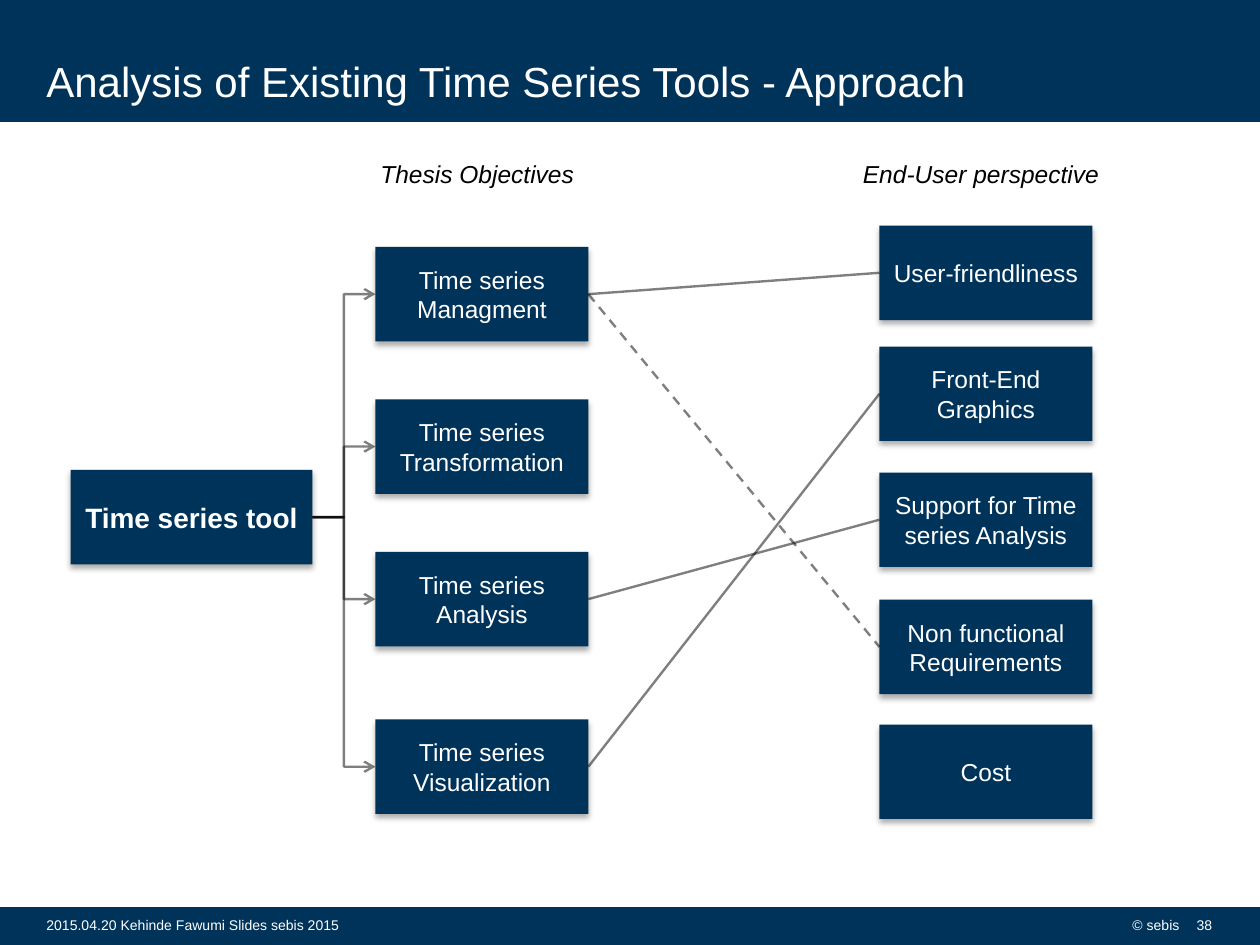
from dataclasses import dataclass
from typing import Any

from lxml import etree
from pptx import Presentation
from pptx import util as u
from pptx.dml.color import RGBColor
from pptx.enum import dml, shapes, text
from pptx.oxml import ns


@dataclass(frozen=True)
class Theme:
    navy: RGBColor = RGBColor(0x00, 0x33, 0x59)
    white: RGBColor = RGBColor(0xFF, 0xFF, 0xFF)
    black: RGBColor = RGBColor(0x00, 0x00, 0x00)
    font: str = "Arial"
    title: float = 24
    root: float = 16
    body: float = 14
    footer: float = 8
    line: float = 1.35


@dataclass(frozen=True)
class Node:
    label: str
    top: float


@dataclass(frozen=True)
class Link:
    objective: int
    perspective: int
    dashed: bool = False


THEME = Theme()
NODE_HEIGHT = 0.75
COLUMN_WIDTH = 1.69
OBJECTIVES_LEFT = 2.98
PERSPECTIVES_LEFT = 6.98
LEFT_SITE, RIGHT_SITE = 1, 3

ROOT = Node("Time series tool", 3.73)
OBJECTIVES = [
    Node("Time series Managment", 1.96),
    Node("Time series Transformation", 3.17),
    Node("Time series Analysis", 4.38),
    Node("Time series Visualization", 5.71),
]
PERSPECTIVES = [
    Node("User-friendliness", 1.79),
    Node("Front-End Graphics", 2.75),
    Node("Support for Time series Analysis", 3.75),
    Node("Non functional Requirements", 4.76),
    Node("Cost", 5.75),
]
LINKS = [Link(3, 1), Link(2, 2), Link(0, 0), Link(0, 3, dashed=True)]


def add_child(parent: Any, tag: str, **attributes: str) -> Any:
    return etree.SubElement(parent, ns.qn(tag), **attributes)


def write(box: Any, words: str, *, size: float, color: RGBColor = THEME.white,
          bold: bool = False, italic: bool = False, wrap: bool = True,
          align: Any = text.PP_ALIGN.LEFT, anchor: Any = text.MSO_ANCHOR.MIDDLE) -> None:
    frame = box.text_frame
    frame.word_wrap = wrap
    frame.vertical_anchor = anchor
    para = frame.paragraphs[0]
    para.alignment = align
    span = para.add_run()
    span.text = words
    span.font.name = THEME.font
    span.font.size = u.Pt(size)
    span.font.bold = bold
    span.font.italic = italic
    span.font.color.rgb = color


def add_label(slide: Any, left: float, top: float, width: float, height: float,
              words: str, **style: Any) -> Any:
    box = slide.shapes.add_textbox(u.Inches(left), u.Inches(top), u.Inches(width), u.Inches(height))
    write(box, words, **style)
    return box


def add_block(slide: Any, left: float, top: float, width: float, height: float) -> Any:
    block = slide.shapes.add_shape(
        shapes.MSO_SHAPE.RECTANGLE,
        u.Inches(left), u.Inches(top), u.Inches(width), u.Inches(height))
    block.shadow.inherit = False
    block.fill.solid()
    block.fill.fore_color.rgb = THEME.navy
    return block


def add_band(slide: Any, top: float, height: float) -> None:
    band = add_block(slide, 0, top, 10, height)
    band.line.color.rgb = THEME.navy
    band.line.width = u.Pt(THEME.line)


def add_node(slide: Any, node: Node, left: float, width: float = COLUMN_WIDTH,
             size: float = THEME.body, bold: bool = False) -> Any:
    block = add_block(slide, left, node.top, width, NODE_HEIGHT)
    block.line.fill.background()
    effects = block._element.spPr.find(ns.qn("a:effectLst"))
    shadow = add_child(effects, "a:outerShdw", blurRad=str(u.Pt(3.5)), dist=str(u.Pt(2.2)),
                       dir="5400000", rotWithShape="0")
    add_child(add_child(shadow, "a:srgbClr", val=str(THEME.black)), "a:alpha", val="32000")
    write(block, node.label, size=size, bold=bold, align=text.PP_ALIGN.CENTER)
    return block


def connect(slide: Any, start: Any, end: Any, *, bent: bool = False,
            dashed: bool = False, arrow: bool = False) -> None:
    kind = shapes.MSO_CONNECTOR.ELBOW if bent else shapes.MSO_CONNECTOR.STRAIGHT
    connector = slide.shapes.add_connector(
        kind, start.left + start.width, start.top + start.height // 2,
        end.left, end.top + end.height // 2)
    connector.begin_connect(start, RIGHT_SITE)
    connector.end_connect(end, LEFT_SITE)
    connector.line.width = u.Pt(THEME.line)
    connector.line.color.rgb = THEME.black
    connector.line.dash_style = dml.MSO_LINE.DASH if dashed else dml.MSO_LINE.SOLID
    properties = connector._element.spPr
    outline = properties.find(ns.qn("a:ln"))
    add_child(outline.find(".//" + ns.qn("a:srgbClr")), "a:alpha", val="50000")
    if arrow:
        add_child(outline, "a:tailEnd", type="arrow")
    add_child(properties, "a:effectLst")


def build_frame(slide: Any) -> None:
    add_band(slide, 7.21, 0.29)
    add_band(slide, 0.01, 0.95)
    title = add_label(slide, 0.27, 0.05, 8.24, 0.79,
                      "Analysis of Existing Time Series Tools - Approach",
                      size=THEME.title, anchor=text.MSO_ANCHOR.BOTTOM)
    title.text_frame.margin_top = title.text_frame.margin_bottom = 0
    add_label(slide, 0.27, 7.18, 4.73, 0.32, "2015.04.20 Kehinde Fawumi Slides sebis 2015",
              size=THEME.footer)
    for left, width, words in [(7.7, 1.76, "© sebis"), (9.32, 0.4, "38")]:
        add_label(slide, left, 7.18, width, 0.32, words, size=THEME.footer,
                  align=text.PP_ALIGN.RIGHT)


def build_diagram(slide: Any) -> None:
    root = add_node(slide, ROOT, 0.56, width=1.92, size=THEME.root, bold=True)
    objectives = [add_node(slide, node, OBJECTIVES_LEFT) for node in OBJECTIVES]
    for objective in objectives:
        connect(slide, root, objective, bent=True, arrow=True)
    perspectives = [add_node(slide, node, PERSPECTIVES_LEFT) for node in PERSPECTIVES]
    for link in LINKS:
        connect(slide, objectives[link.objective], perspectives[link.perspective],
                dashed=link.dashed)
    for left, width, words in [(2.92, 1.75, "Thesis Objectives"),
                               (6.75, 2.08, "End-User perspective")]:
        add_label(slide, left, 1.21, width, 0.34, words, size=THEME.body, color=THEME.black,
                  italic=True, wrap=False, anchor=text.MSO_ANCHOR.TOP)


def main() -> None:
    deck = Presentation()
    deck.slide_width, deck.slide_height = u.Inches(10), u.Inches(7.5)
    slide = deck.slides.add_slide(deck.slide_layouts[6])
    build_frame(slide)
    build_diagram(slide)
    deck.save("out.pptx")


if __name__ == "__main__":
    main()
